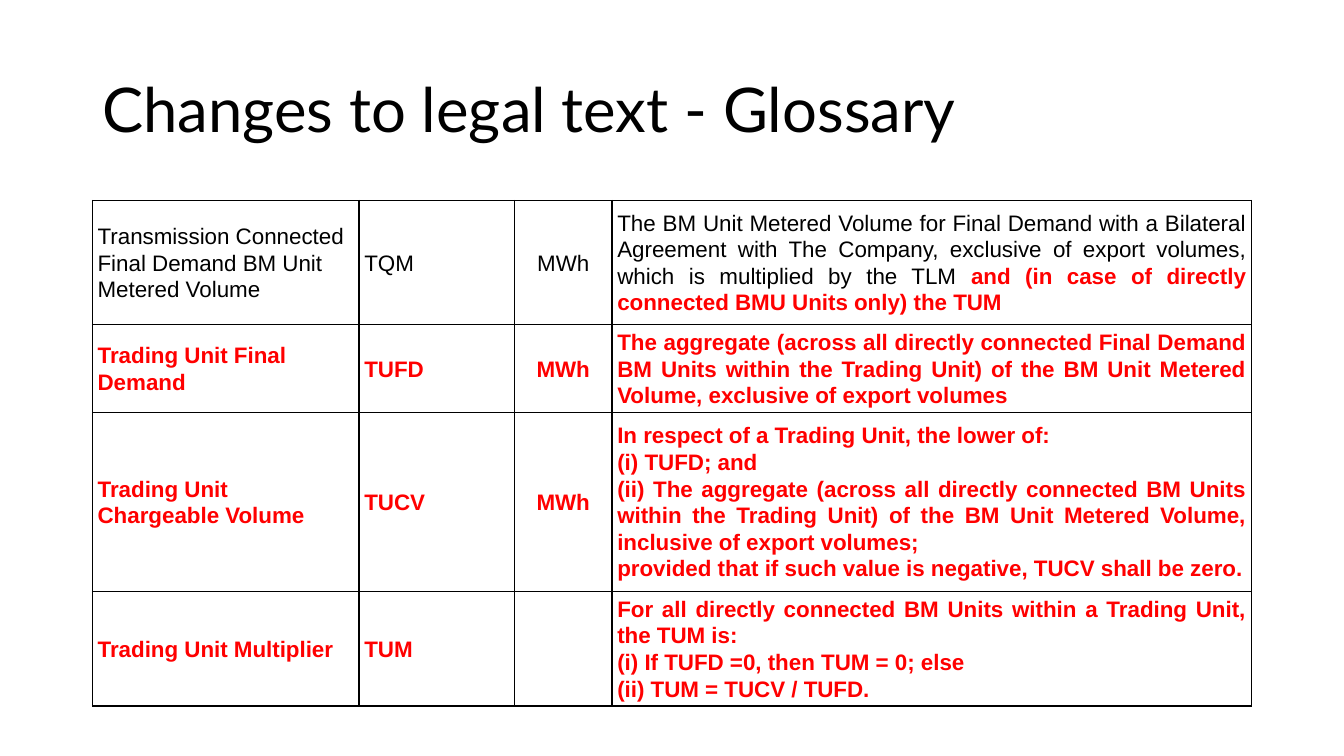
"""Build the slide that lists glossary changes to the legal text."""
from lxml.etree import SubElement
from pptx import Presentation
from pptx.dml.color import RGBColor
from pptx.enum.text import MSO_ANCHOR, PP_ALIGN
from pptx.oxml.ns import qn
from pptx.util import Pt

PX = 9525
BLACK = RGBColor(0, 0, 0)
RED = RGBColor(255, 0, 0)
LEFT, MID, JUST = PP_ALIGN.LEFT, PP_ALIGN.CENTER, PP_ALIGN.JUSTIFY


def write(frame, text, font="Arial", size=16, align=LEFT, space=1.07, new=False):
    for i, line in enumerate(text.split("\n")):
        para = frame.paragraphs[0] if i == 0 else frame.add_paragraph()
        para.alignment = align
        para.line_spacing = space
        para.font.size = Pt(size)
        for j, part in enumerate(line.split("|")):
            fresh = new or j > 0
            run = para.add_run()
            run.text = part
            run.font.name = font
            run.font.size = Pt(size)
            run.font.bold = fresh
            run.font.color.rgb = RED if fresh else BLACK


def border(cell):
    props = cell._tc.get_or_add_tcPr()
    for side in ("a:lnL", "a:lnR", "a:lnT", "a:lnB"):
        line = SubElement(props, qn(side), w=str(Pt(1)))
        paint = SubElement(line, qn("a:solidFill"))
        SubElement(paint, qn("a:srgbClr"), val=str(BLACK))


deck = Presentation()
deck.slide_width, deck.slide_height = 1280 * PX, 720 * PX
slide = deck.slides.add_slide(deck.slide_layouts[6])

title = slide.shapes.add_textbox(88 * PX, 38 * PX, 1104 * PX, 139 * PX).text_frame
title.word_wrap = True
title.vertical_anchor = MSO_ANCHOR.MIDDLE
write(title, "Changes to legal text - Glossary", font="Lato", size=44, space=0.9)

terms = [
    ("Transmission Connected Final Demand BM Unit Metered Volume", "TQM", "MWh",
     "The BM Unit Metered Volume for Final Demand with a Bilateral Agreement with "
     "The Company, exclusive of export volumes, which is multiplied by the TLM "
     "|and (in case of directly connected BMU Units only) the TUM"),
    ("Trading Unit Final Demand", "TUFD", "MWh",
     "The aggregate (across all directly connected Final Demand BM Units within "
     "the Trading Unit) of the BM Unit Metered Volume, exclusive of export volumes"),
    ("Trading Unit Chargeable Volume", "TUCV", "MWh",
     "In respect of a Trading Unit, the lower of:\n"
     "(i) TUFD; and\n"
     "(ii) The aggregate (across all directly connected BM Units within the "
     "Trading Unit) of the BM Unit Metered Volume, inclusive of export volumes;\n"
     "provided that if such value is negative, TUCV shall be zero."),
    ("Trading Unit Multiplier", "TUM", "",
     "For all directly connected BM Units within a Trading Unit, the TUM is:\n"
     "(i) If TUFD =0, then TUM = 0; else\n"
     "(ii) TUM = TUCV / TUFD."),
]
widths = [254, 148, 93, 609]
heights = [118, 84, 170, 101]
aligns = [LEFT, LEFT, MID, JUST]

table = slide.shapes.add_table(
    len(terms), len(widths), 88 * PX, 191 * PX, sum(widths) * PX, sum(heights) * PX
).table
table.first_row = table.horz_banding = False
for col, width in zip(table.columns, widths):
    col.width = width * PX
for row, height in zip(table.rows, heights):
    row.height = height * PX

for r, term in enumerate(terms):
    for c, text in enumerate(term):
        cell = table.cell(r, c)
        border(cell)
        cell.fill.background()
        cell.margin_left = cell.margin_right = 5 * PX
        cell.margin_top = cell.margin_bottom = 0
        cell.vertical_anchor = MSO_ANCHOR.MIDDLE
        if text:
            write(cell.text_frame, text, align=aligns[c], new=r > 0)

deck.save("out.pptx")
